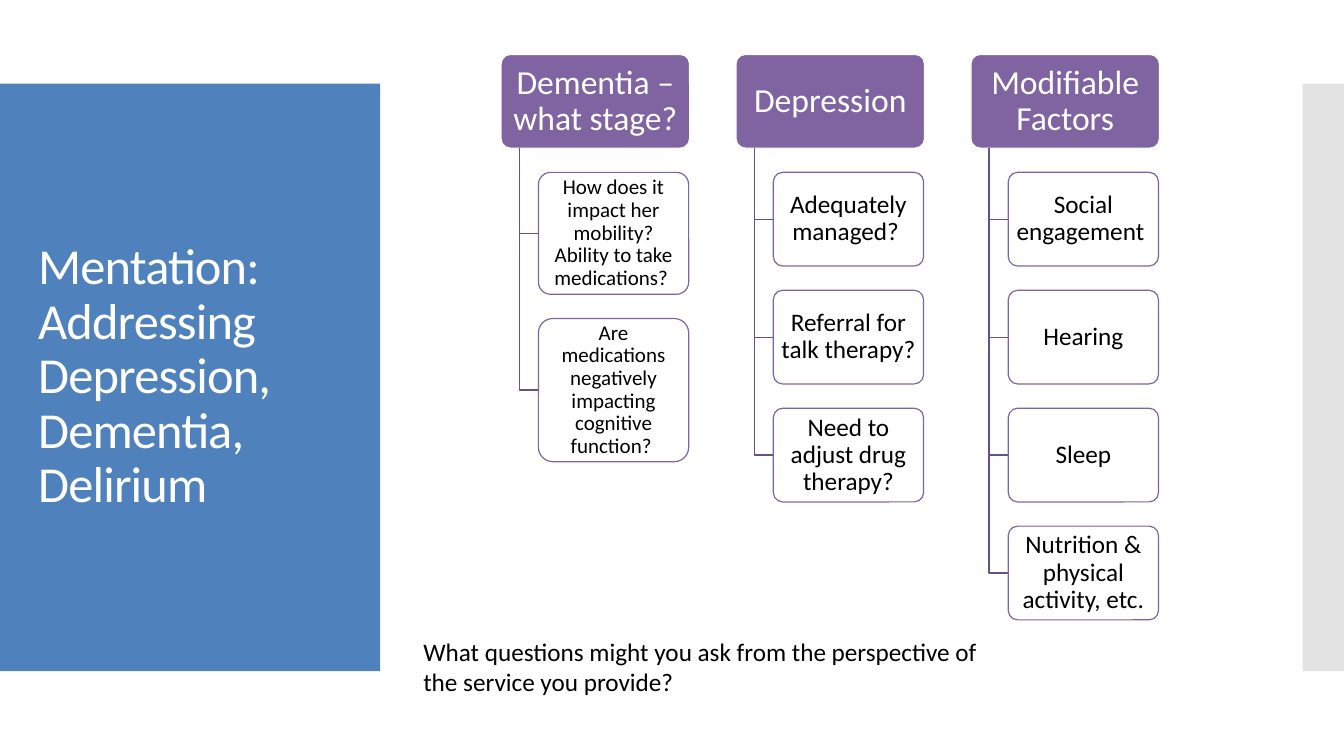
from dataclasses import dataclass

from lxml.etree import SubElement
from pptx import Presentation
from pptx.dml.color import RGBColor
from pptx.enum.shapes import MSO_SHAPE
from pptx.enum.text import MSO_ANCHOR, PP_ALIGN
from pptx.oxml.ns import qn
from pptx.util import Inches, Pt


@dataclass(frozen=True)
class Theme:
    font: str = "Calibri"
    white: str = "FFFFFF"
    black: str = "000000"
    blue: str = "4F81BD"
    grey: str = "C8C8C8"
    purple: str = "8064A2"
    branch: str = "675082"
    title_size: int = 36
    header_size: int = 24
    body_size: int = 18
    small_size: int = 15
    line_width: float = 0.85


class SlideBuilder:
    def __init__(self, page, theme):
        self.page = page
        self.theme = theme

    def paint(self, shape, fill, line=None, opacity=100):
        shape.shadow.inherit = False
        shape.fill.solid()
        shape.fill.fore_color.rgb = RGBColor.from_string(fill)
        if opacity < 100:
            color = shape.element.spPr.find(qn("a:solidFill"))[0]
            SubElement(color, qn("a:alpha"), val=str(opacity * 1000))
        if line:
            self.stroke(shape, line)
        else:
            shape.line.fill.background()

    def stroke(self, shape, color):
        shape.line.color.rgb = RGBColor.from_string(color)
        shape.line.width = Pt(self.theme.line_width)

    def set_text(self, shape, text, size, color, align=PP_ALIGN.LEFT,
                 anchor=MSO_ANCHOR.TOP, inset=(0.1, 0.05), spacing=None, tracking=None):
        frame = shape.text_frame
        frame.word_wrap = True
        frame.vertical_anchor = anchor
        frame.margin_left = frame.margin_right = Inches(inset[0])
        frame.margin_top = frame.margin_bottom = Inches(inset[1])
        frame.text = text
        para = frame.paragraphs[0]
        para.alignment = align
        para.line_spacing = spacing
        span = para.runs[0]
        span.font.name = self.theme.font
        span.font.size = Pt(size)
        span.font.color.rgb = RGBColor.from_string(color)
        if tracking is not None:
            span._r.get_or_add_rPr().set("spc", str(round(tracking * 100)))

    def panel(self, left, top, width, height, fill, opacity=100):
        shape = self.page.shapes.add_shape(
            MSO_SHAPE.RECTANGLE, Inches(left), Inches(top), Inches(width), Inches(height))
        self.paint(shape, fill, opacity=opacity)

    def label(self, left, top, width, height, text, size, color, **style):
        box = self.page.shapes.add_textbox(
            Inches(left), Inches(top), Inches(width), Inches(height))
        self.set_text(box, text, size, color, **style)

    def card(self, left, top, width, height, text, size, color, fill, line, inset, opacity=100):
        shape = self.page.shapes.add_shape(
            MSO_SHAPE.ROUNDED_RECTANGLE,
            Inches(left), Inches(top), Inches(width), Inches(height))
        shape.adjustments[0] = 0.1
        self.paint(shape, fill, line, opacity)
        self.set_text(shape, text, size, color, align=PP_ALIGN.CENTER,
                      anchor=MSO_ANCHOR.MIDDLE, inset=inset, spacing=0.9)

    def branch(self, left, top, right, bottom):
        outline = self.page.shapes.build_freeform(Inches(left), Inches(top))
        outline.add_line_segments(
            [(Inches(left), Inches(bottom)), (Inches(right), Inches(bottom))], close=False)
        shape = outline.convert_to_shape()
        shape.shadow.inherit = False
        shape.fill.background()
        self.stroke(shape, self.theme.branch)

    def topic(self, left, header, items, size, heights):
        theme = self.theme
        top, header_height, gap = 0.54, 0.93, 0.24
        header_bottom = top + header_height
        self.card(left, top, 1.87, header_height, header, theme.header_size,
                  theme.white, theme.purple, theme.white, (0.05, 0.03))
        item_left, item_top = left + 0.37, header_bottom + gap
        for item, height in zip(items, heights):
            self.branch(left + 0.18, header_bottom, item_left, item_top + height / 2)
            self.card(item_left, item_top, 1.49, height, item, size, theme.black,
                      theme.white, theme.purple, (0.04, 0.02), opacity=90)
            item_top += height + gap


def main():
    deck = Presentation()
    deck.slide_width, deck.slide_height = Inches(13.33), Inches(7.5)
    theme = Theme()
    builder = SlideBuilder(deck.slides.add_slide(deck.slide_layouts[6]), theme)

    builder.panel(0, 0.83, 3.77, 5.83, theme.blue)
    builder.panel(12.92, 0.83, 0.41, 5.83, theme.grey, opacity=50)
    builder.label(0.28, 1.23, 3.22, 5.03,
                  "Mentation: Addressing Depression, Dementia, Delirium",
                  theme.title_size, theme.white, anchor=MSO_ANCHOR.MIDDLE,
                  spacing=0.9, tracking=-0.6)

    topics = [
        ("Dementia – what stage?",
         ["How does it impact her mobility? Ability to take medications? ",
          "Are medications negatively impacting cognitive function? "],
         theme.small_size, [1.21, 1.42]),
        ("Depression",
         ["Adequately managed? ", "Referral for talk therapy? ",
          "Need to adjust drug therapy?"],
         theme.body_size, [0.93] * 3),
        ("Modifiable Factors",
         ["Social engagement ", "Hearing", "Sleep", "Nutrition & physical activity, etc."],
         theme.body_size, [0.93] * 4),
    ]
    for column, topic in enumerate(topics):
        builder.topic(4.97 + 2.33 * column, *topic)

    builder.label(4.1, 6.26, 6.05, 0.71,
                  "What questions might you ask from the perspective of the service you provide?",
                  theme.body_size, theme.black)
    deck.save("out.pptx")


if __name__ == "__main__":
    main()
